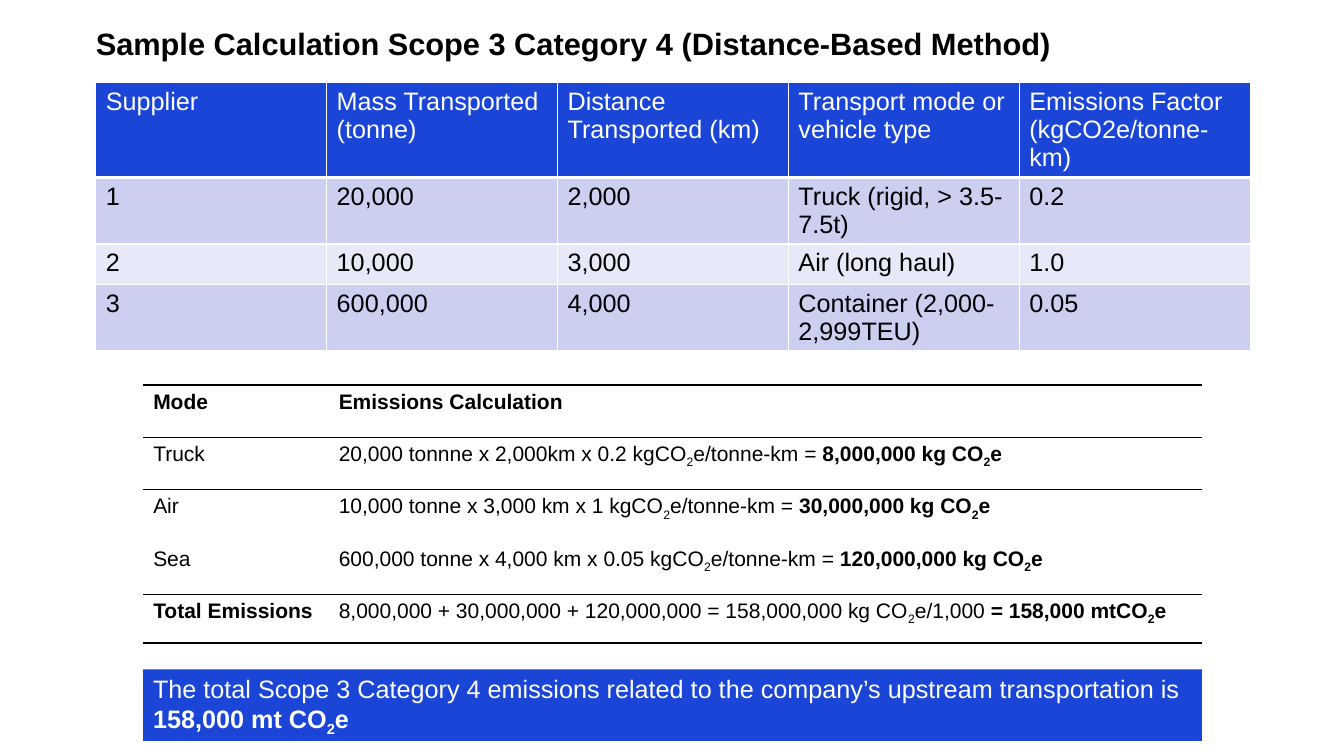
from lxml.etree import SubElement
from pptx import Presentation
from pptx.dml.color import RGBColor
from pptx.enum.shapes import MSO_SHAPE
from pptx.enum.text import MSO_ANCHOR, PP_ALIGN
from pptx.oxml.ns import qn
from pptx.util import Inches, Pt

BLUE = RGBColor(0x1A, 0x45, 0xD7)
LILAC = RGBColor(0xCD, 0xCF, 0xF0)
PALE_LILAC = RGBColor(0xE8, 0xE9, 0xF8)
WHITE = RGBColor(0xFF, 0xFF, 0xFF)
BLACK = RGBColor(0, 0, 0)

# Text is a list of (words, bold) parts; "_" lowers the character after it.
TITLE = [("Sample Calculation Scope 3 Category 4 (Distance-Based Method)", True)]
SUPPLIERS = [
    ("Supplier", "Mass Transported (tonne)", "Distance Transported (km)",
     "Transport mode or vehicle type", "Emissions Factor (kgCO2e/tonne-km)"),
    ("1", "20,000", "2,000", "Truck (rigid, > 3.5-7.5t)", "0.2"),
    ("2", "10,000", "3,000", "Air (long haul)", "1.0"),
    ("3", "600,000", "4,000", "Container (2,000-2,999TEU)", "0.05"),
]
CALCULATIONS = [
    ([("Mode", True)], [("Emissions Calculation", True)]),
    ([("Truck", False)],
     [("20,000 tonnne x 2,000km x 0.2 kgCO_2e/tonne-km = ", False),
      ("8,000,000 kg CO_2e", True)]),
    ([("Air", False)],
     [("10,000 tonne x 3,000 km x 1 kgCO_2e/tonne-km = ", False),
      ("30,000,000 kg CO_2e", True)]),
    ([("Sea", False)],
     [("600,000 tonne x 4,000 km x 0.05 kgCO_2e/tonne-km = ", False),
      ("120,000,000 kg CO_2e", True)]),
    ([("Total Emissions", True)],
     [("8,000,000 + 30,000,000 + 120,000,000 = 158,000,000 kg CO_2e/1,000 ", False),
      ("= 158,000 mtCO_2e", True)]),
]
RULED_EDGES = {0, 1, 2, 4, 5}  # row edges of the calculations that carry a line
CONCLUSION = [
    ("The total Scope 3 Category 4 emissions related to the company’s "
     "upstream transportation is ", False),
    ("158,000 mt CO_2e", True),
]


def write(frame, parts, size, color):
    paragraph = frame.paragraphs[0]
    paragraph.alignment = PP_ALIGN.LEFT
    for words, bold in parts:
        before, *lowered = words.split("_")
        pieces = [(before, False)]
        for piece in lowered:
            pieces += [(piece[0], True), (piece[1:], False)]
        for text, is_subscript in pieces:
            run = paragraph.add_run()
            run.text = text
            run.font.name, run.font.size, run.font.bold = "Arial", Pt(size), bold
            run.font.color.rgb = color
            if is_subscript:
                run.font._element.set("baseline", "-25000")


def set_borders(cell, borders):
    """Set L, R, T and B borders from (colour, points), or None for no line."""
    properties = cell._tc.get_or_add_tcPr()
    for side in "LRTB":
        line = SubElement(properties, qn(f"a:ln{side}"))
        if borders.get(side):
            color, points = borders[side]
            line.set("w", str(Pt(points)))
            fill = SubElement(line, qn("a:solidFill"))
            SubElement(fill, qn("a:srgbClr")).set("val", str(color))
        else:
            SubElement(line, qn("a:noFill"))


def add_table(slide, left, top, widths, heights):
    table = slide.shapes.add_table(
        len(heights), len(widths), Inches(left), Inches(top),
        Inches(sum(widths)), Inches(sum(heights))).table
    for column, width in zip(table.columns, widths):
        column.width = Inches(width)
    for row, height in zip(table.rows, heights):
        row.height = Inches(height)
    return table


def add_suppliers(slide):
    table = add_table(slide, 0.95, 0.82, [2.29] * 5, [0.81, 0.4, 0.4, 0.4])
    for r, row in enumerate(SUPPLIERS):
        fill = BLUE if r == 0 else LILAC if r % 2 else PALE_LILAC
        for c, text in enumerate(row):
            cell = table.cell(r, c)
            write(cell.text_frame, [(text, False)], 18, BLACK if r else WHITE)
            borders = dict.fromkeys("LRTB", (WHITE, 1))
            if r < 2:
                borders["T" if r else "B"] = (WHITE, 3)
            set_borders(cell, borders)
            cell.fill.solid()
            cell.fill.fore_color.rgb = fill


def add_calculations(slide):
    table = add_table(slide, 1.42, 3.82, [1.84, 8.66], [0.52] * 4 + [0.48])
    for r, row in enumerate(CALCULATIONS):
        for c, parts in enumerate(row):
            cell = table.cell(r, c)
            write(cell.text_frame, parts, 15, BLACK)
            set_borders(cell, {side: (BLACK, 1) for side, edge in (("T", r), ("B", r + 1))
                               if edge in RULED_EDGES})
            cell.fill.background()


def add_conclusion(slide):
    banner = slide.shapes.add_shape(
        MSO_SHAPE.RECTANGLE, Inches(1.42), Inches(6.64), Inches(10.5), Inches(0.71))
    banner.shadow.inherit = False
    banner.fill.solid()
    banner.fill.fore_color.rgb = BLUE
    banner.line.fill.background()
    banner.text_frame.word_wrap = True
    write(banner.text_frame, CONCLUSION, 18, WHITE)


def main():
    deck = Presentation()
    deck.slide_width, deck.slide_height = Inches(13.33), Inches(7.5)
    slide = deck.slides.add_slide(deck.slide_layouts[5])
    title = slide.shapes.title
    title.left, title.top = Inches(0.85), Inches(0.2)
    title.width, title.height = Inches(12.05), Inches(0.61)
    title.text_frame.vertical_anchor = MSO_ANCHOR.TOP
    write(title.text_frame, TITLE, 22, BLACK)
    add_suppliers(slide)
    add_calculations(slide)
    add_conclusion(slide)
    deck.save("out.pptx")


if __name__ == "__main__":
    main()
